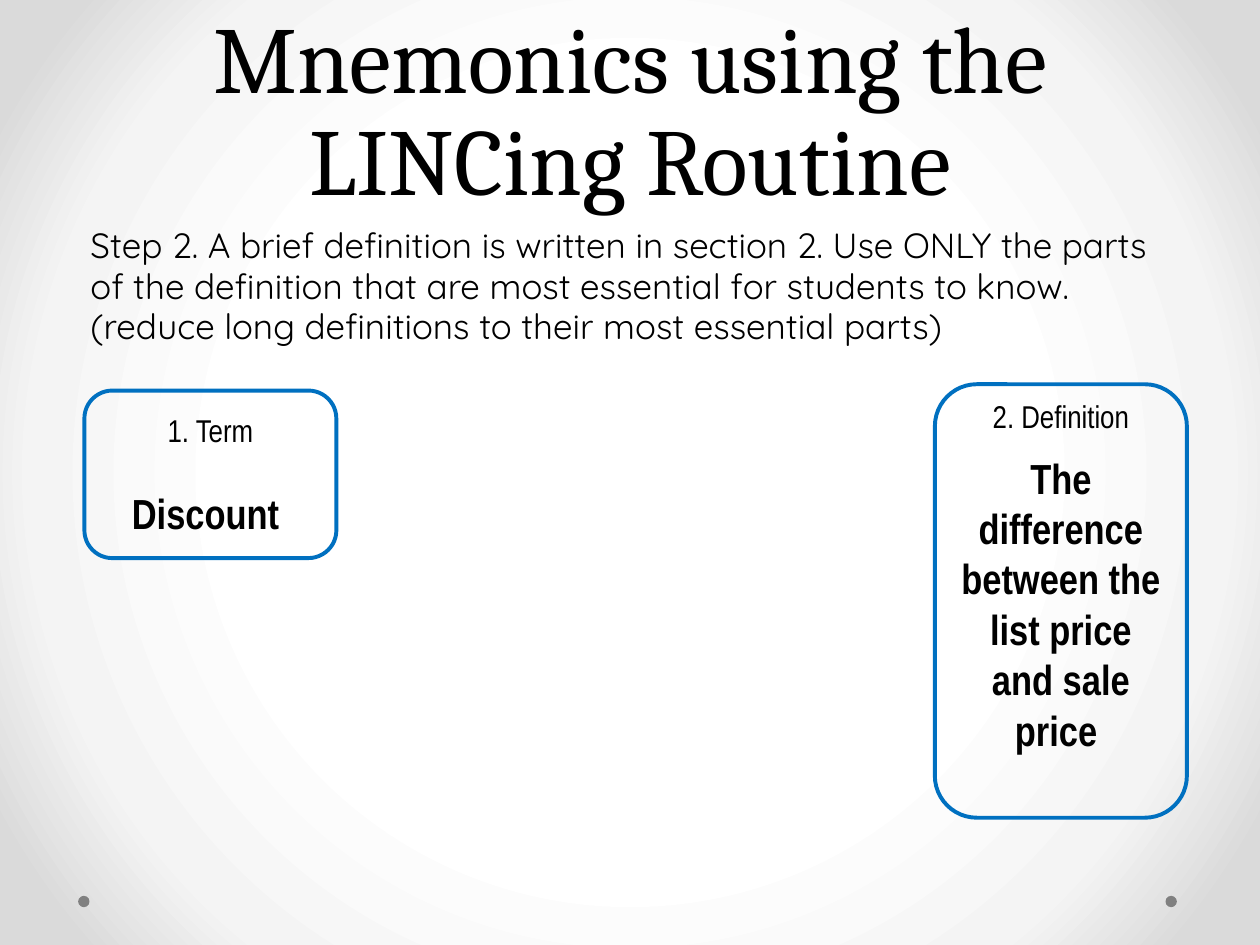
from lxml import etree
from pptx import Presentation
from pptx.dml.color import RGBColor
from pptx.enum.shapes import MSO_SHAPE
from pptx.enum.text import MSO_ANCHOR, MSO_AUTO_SIZE, PP_ALIGN
from pptx.oxml.ns import qn
from pptx.util import Inches, Pt


def color(value):
    """Turn a hex string into a colour."""
    return RGBColor.from_string(value)


def place(shape, left, top, width, height):
    """Position and size a shape in inches."""
    shape.left, shape.top = Inches(left), Inches(top)
    shape.width, shape.height = Inches(width), Inches(height)


def write(paragraph, text, font="Arial Narrow", size=18, bold=False,
          align=PP_ALIGN.CENTER, before=0, spacing=None):
    """Add formatted text to a paragraph."""
    paragraph.alignment = align
    paragraph.space_before = Pt(before)
    paragraph.line_spacing = spacing
    run = paragraph.add_run()
    run.text = text
    run.font.name, run.font.size, run.font.bold = font, Pt(size), bold
    run.font.color.rgb = color("000000")


def set_background(slide):
    """Fill the background with a circular gradient."""
    fill = slide.background.fill
    fill.gradient()
    gradient = slide.background._cSld.find(".//" + qn("a:gradFill"))
    for child in list(gradient):
        gradient.remove(child)
    stops = etree.SubElement(gradient, qn("a:gsLst"))
    for position, shade in ((50, "FFFFFF"), (76, "F4F4F4"), (92, "DADADA")):
        stop = etree.SubElement(stops, qn("a:gs"), pos=str(position * 1000))
        etree.SubElement(stop, qn("a:srgbClr"), val=shade)
    circle = etree.SubElement(gradient, qn("a:path"))
    circle.set("path", "circle")
    etree.SubElement(circle, qn("a:fillToRect"),
                     l="50000", t="50000", r="50000", b="50000")


def add_dot(slide, left):
    """Add a grey footer dot."""
    dot = slide.shapes.add_shape(MSO_SHAPE.OVAL, Inches(left), Inches(7.11),
                                 Inches(0.09), Inches(0.09))
    dot.shadow.inherit = False
    dot.fill.solid()
    dot.fill.fore_color.rgb = color("808080")
    dot.line.fill.background()


def add_title(slide, text):
    """Format and fill the title placeholder."""
    title = slide.shapes.title
    place(title, 0.5, 0, 9, 1.75)
    frame = title.text_frame
    frame.auto_size = MSO_AUTO_SIZE.NONE
    frame.vertical_anchor = MSO_ANCHOR.BOTTOM
    write(frame.paragraphs[0], text, font="Cambria", size=54, spacing=Pt(58))


def add_instruction(slide, text):
    """Add the indented step instruction."""
    instruction = slide.shapes.add_textbox(Inches(0.5), Inches(1.75),
                                           Inches(9), Inches(4.95))
    frame = instruction.text_frame
    frame.word_wrap = True
    paragraph = frame.paragraphs[0]
    write(paragraph, text, font="Quicksand", size=20,
          align=PP_ALIGN.LEFT, spacing=0.96)
    paragraph._p.get_or_add_pPr().set("marL", str(Inches(0.12)))


def add_section(slide, left, top, height, heading, content, gap, bottom=0.05):
    """Add a rounded section with a heading and bold content."""
    section = slide.shapes.add_shape(MSO_SHAPE.ROUNDED_RECTANGLE, Inches(left),
                                     Inches(top), Inches(2), Inches(height))
    section.shadow.inherit = False
    section.fill.background()
    section.line.color.rgb = color("0070C0")
    section.line.width = Pt(2.25)
    frame = section.text_frame
    frame.word_wrap = True
    frame.vertical_anchor = MSO_ANCHOR.MIDDLE
    frame.margin_bottom = Inches(bottom)
    write(frame.paragraphs[0], heading)
    write(frame.add_paragraph(), content, size=24, bold=True, before=gap)


def main():
    """Build and save the slide."""
    deck = Presentation()
    deck.slide_width, deck.slide_height = Inches(10), Inches(7.5)
    slide = deck.slides.add_slide(deck.slide_layouts[5])
    set_background(slide)
    for left in (9.25, 0.62):
        add_dot(slide, left)
    add_instruction(slide, "Step 2. A brief definition is written in section 2. "
                    "Use ONLY the parts of the definition that are most "
                    "essential for students to know. (reduce long definitions "
                    "to their most essential parts)")
    add_title(slide, "Mnemonics using the LINCing Routine")
    add_section(slide, 0.67, 3.1, 1.33, "1. Term", "Discount ", gap=22)
    add_section(slide, 7.42, 3.05, 3.44, "2. Definition",
                "The difference between the list price and sale price ",
                gap=10, bottom=0.45)
    deck.save("out.pptx")


if __name__ == "__main__":
    main()
